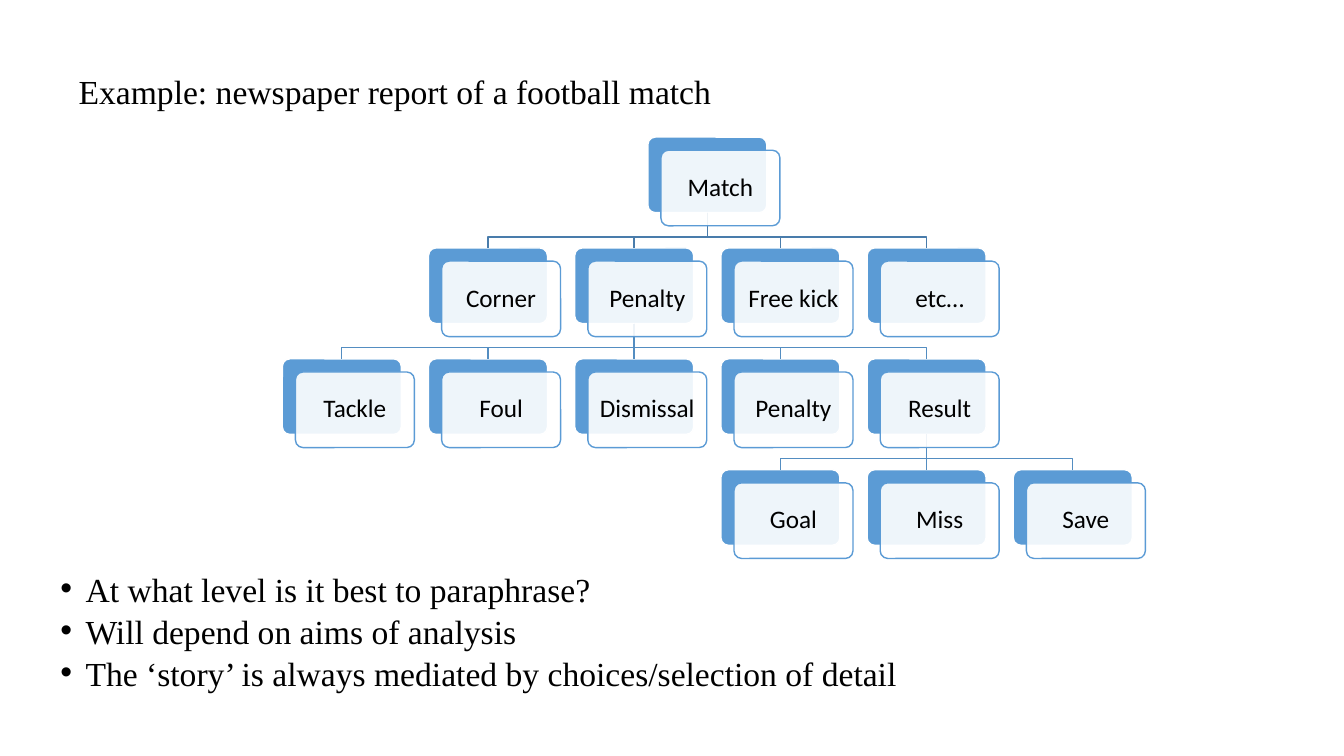
from lxml.etree import SubElement
from pptx import Presentation
from pptx.dml.color import RGBColor
from pptx.enum.shapes import MSO_CONNECTOR, MSO_SHAPE
from pptx.enum.text import MSO_ANCHOR, PP_ALIGN
from pptx.oxml.ns import qn
from pptx.util import Inches, Pt

TITLE = "Example: newspaper report of a football match"
BULLETS = [
    "At what level is it best to paraphrase?",
    "Will depend on aims of analysis",
    "The ‘story’ is always mediated by choices/selection of detail",
]
# label, column, row, index of parent
NODES = [
    ("Match", 2.5, 0, None),
    ("Corner", 1, 1, 0),
    ("Penalty", 2, 1, 0),
    ("Free kick", 3, 1, 0),
    ("etc…", 4, 1, 0),
    ("Tackle", 0, 2, 2),
    ("Foul", 1, 2, 2),
    ("Dismissal", 2, 2, 2),
    ("Penalty", 3, 2, 2),
    ("Result", 4, 2, 2),
    ("Goal", 3, 3, 9),
    ("Miss", 4, 3, 9),
    ("Save", 5, 3, 9),
]
BLACK = RGBColor(0x00, 0x00, 0x00)
WHITE = RGBColor(0xFF, 0xFF, 0xFF)
BLUE = RGBColor(0x5B, 0x9B, 0xD5)
LINK_COLORS = {1: RGBColor(0x49, 0x7C, 0xAB)}
LOWER_LINK = RGBColor(0x53, 0x8D, 0xC1)

TREE_LEFT, TREE_TOP = Inches(2.8), Inches(1.36)
COLUMN_PITCH, ROW_PITCH = Inches(1.45), Inches(1.1)
CARD_WIDTH, CARD_HEIGHT = Inches(1.18), Inches(0.75)
CARD_OFFSET = Inches(0.13)
BEND_DROP = Inches(0.24)


def style_text(paragraph, font_name, size, line_spacing, alignment):
    """Set the font and layout of one paragraph."""
    paragraph.font.name = font_name
    paragraph.font.size = Pt(size)
    paragraph.font.color.rgb = BLACK
    paragraph.line_spacing = line_spacing
    paragraph.alignment = alignment


def add_card(slide, left, top, fill_color, line_color):
    """Add one rounded card."""
    card = slide.shapes.add_shape(
        MSO_SHAPE.ROUNDED_RECTANGLE, left, top, CARD_WIDTH, CARD_HEIGHT)
    card.adjustments[0] = 0.1
    card.shadow.inherit = False
    card.fill.solid()
    card.fill.fore_color.rgb = fill_color
    card.line.color.rgb = line_color
    card.line.width = Pt(1)
    return card


def add_link(slide, parent, child, color):
    """Link a parent card to a child card, bending where they are not aligned."""
    start_x, end_x = (card.left + card.width // 2 for card in (parent, child))
    start_y, end_y = parent.top + parent.height, child.top
    if start_x == end_x:
        link = slide.shapes.add_connector(
            MSO_CONNECTOR.STRAIGHT, start_x, start_y, end_x, end_y)
        link.begin_connect(parent, 2)
        link.end_connect(child, 0)
        SubElement(link.element.spPr, qn("a:effectLst"))
    else:
        bend_y = start_y + BEND_DROP
        builder = slide.shapes.build_freeform(start_x, start_y)
        builder.add_line_segments(
            [(start_x, bend_y), (end_x, bend_y), (end_x, end_y)], close=False)
        link = builder.convert_to_shape()
        link.fill.background()
        link.shadow.inherit = False
    link.line.color.rgb = color
    link.line.width = Pt(1)


def add_label_card(slide, back_card, label):
    """Add the translucent front card that carries a node's label."""
    card = add_card(slide, back_card.left + CARD_OFFSET,
                    back_card.top + CARD_OFFSET, WHITE, BLUE)
    color = card.element.spPr.find(qn("a:solidFill")).find(qn("a:srgbClr"))
    SubElement(color, qn("a:alpha"), val="90000")
    frame = card.text_frame
    frame.word_wrap = True
    frame.vertical_anchor = MSO_ANCHOR.MIDDLE
    frame.margin_left = frame.margin_right = Inches(0.07)
    frame.margin_top = frame.margin_bottom = Inches(0.07)
    frame.text = label
    style_text(frame.paragraphs[0], "Calibri", 18, 0.9, PP_ALIGN.CENTER)


def add_tree(slide):
    """Draw the tree of match events."""
    back_cards = [
        add_card(slide, TREE_LEFT + int(column * COLUMN_PITCH),
                 TREE_TOP + row * ROW_PITCH, BLUE, WHITE)
        for _, column, row, _ in NODES
    ]
    for (_, _, row, parent), child_card in zip(NODES, back_cards):
        if parent is not None:
            add_link(slide, back_cards[parent], child_card,
                     LINK_COLORS.get(row, LOWER_LINK))
    for (label, *_), back_card in zip(NODES, back_cards):
        add_label_card(slide, back_card, label)


def add_title(slide):
    """Place and format the title."""
    title = slide.shapes.title
    title.left, title.top = Inches(0.68), Inches(0.2)
    title.width, title.height = Inches(11.5), Inches(1.45)
    title.text_frame.text = TITLE
    title.text_frame.vertical_anchor = MSO_ANCHOR.MIDDLE
    style_text(title.text_frame.paragraphs[0], "Times New Roman", 24, 0.9, PP_ALIGN.LEFT)


def add_bullets(slide):
    """Add the bulleted remarks."""
    box = slide.shapes.add_textbox(
        Inches(0.5), Inches(5.7), Inches(11.92), Inches(1.29))
    frame = box.text_frame
    frame.word_wrap = True
    frame.text = "\n".join(BULLETS)
    for paragraph in frame.paragraphs:
        style_text(paragraph, "Times New Roman", 24, 0.7, PP_ALIGN.LEFT)
        paragraph.space_before = Pt(10)
        properties = paragraph._p.get_or_add_pPr()
        properties.set("marL", str(Inches(0.25)))
        properties.set("indent", str(-Inches(0.25)))
        bullet_font = properties.makeelement(qn("a:buFont"), {"typeface": "Arial"})
        bullet = properties.makeelement(qn("a:buChar"), {"char": "•"})
        default_run = properties.find(qn("a:defRPr"))
        default_run.addprevious(bullet_font)
        default_run.addprevious(bullet)


def main():
    """Build the slide and save it."""
    presentation = Presentation()
    presentation.slide_width = Inches(13.33)
    presentation.slide_height = Inches(7.5)
    slide = presentation.slides.add_slide(presentation.slide_layouts[5])
    add_title(slide)
    add_bullets(slide)
    add_tree(slide)
    presentation.save("out.pptx")


if __name__ == "__main__":
    main()
